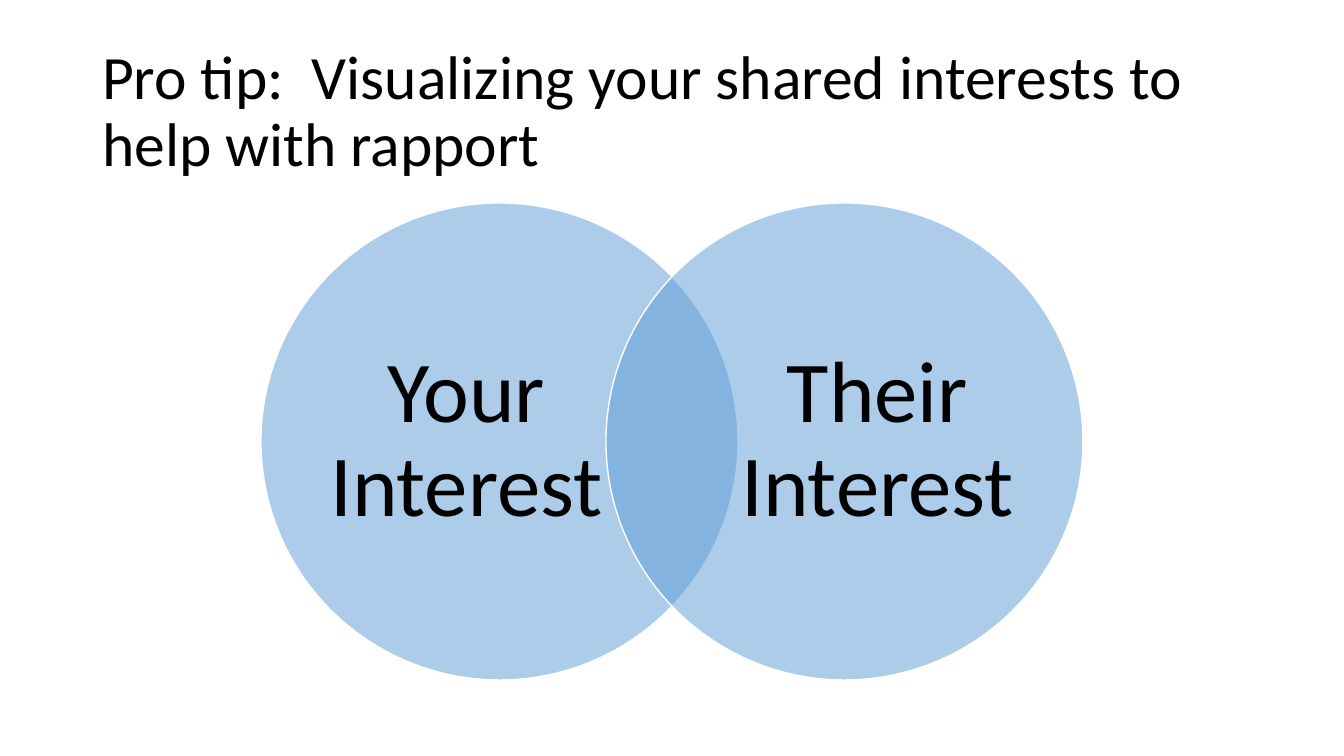
from dataclasses import dataclass

from lxml import etree
from pptx import Presentation
from pptx.dml.color import RGBColor
from pptx.enum.shapes import MSO_SHAPE
from pptx.enum.text import MSO_ANCHOR, MSO_AUTO_SIZE, PP_ALIGN
from pptx.oxml.ns import qn
from pptx.shapes.group import GroupShape
from pptx.text.text import TextFrame
from pptx.util import Emu, Pt

OVAL = MSO_SHAPE.OVAL
MIDDLE = MSO_ANCHOR.MIDDLE
NO_AUTOFIT = MSO_AUTO_SIZE.NONE
LEFT, CENTER = PP_ALIGN.LEFT, PP_ALIGN.CENTER

EMU_PER_PX = 914400 / 100.8
SLIDE_WIDTH, SLIDE_HEIGHT = 1344, 756
TITLE_ONLY = 5

# Venn geometry in px
DIAMETER = 477
CIRCLE_TOP = 203
LABEL_WIDTH, LABEL_HEIGHT = 275, 365
OUTER_MARGIN = 68  # from a circle's outer edge to its label


@dataclass(frozen=True)
class Theme:
    font: str = "Calibri"
    text: RGBColor = RGBColor(0x00, 0x00, 0x00)
    circle: RGBColor = RGBColor(0x5B, 0x9B, 0xD5)
    outline: RGBColor = RGBColor(0xFF, 0xFF, 0xFF)
    circle_opacity: int = 50
    outline_width: int = 1
    title_size: int = 44
    label_size: int = 62
    line_spacing: float = 0.9


@dataclass(frozen=True)
class Interest:
    label: str
    circle_left: int
    label_offset: int


THEME = Theme()
INTERESTS = (
    Interest("Your Interest", 261, OUTER_MARGIN),
    Interest("Their Interest", 606, DIAMETER - LABEL_WIDTH - OUTER_MARGIN),
)


def px(length: int) -> Emu:
    return Emu(round(length * EMU_PER_PX))


def write(frame: TextFrame, text: str, size: int, alignment: PP_ALIGN) -> None:
    frame.text = text
    frame.word_wrap = True
    frame.auto_size = NO_AUTOFIT
    frame.vertical_anchor = MIDDLE
    paragraph = frame.paragraphs[0]
    paragraph.alignment = alignment
    paragraph.line_spacing = THEME.line_spacing
    font = paragraph.runs[0].font
    font.name = THEME.font
    font.size = Pt(size)
    font.color.rgb = THEME.text


def draw_interest(venn: GroupShape, interest: Interest) -> None:
    # Translucent circle
    circle = venn.shapes.add_shape(
        OVAL, px(interest.circle_left), px(CIRCLE_TOP), px(DIAMETER), px(DIAMETER)
    )
    circle.shadow.inherit = False
    circle.fill.solid()
    circle.fill.fore_color.rgb = THEME.circle
    fill_color = circle.fill._xPr.find(qn("a:solidFill"))[0]
    etree.SubElement(fill_color, qn("a:alpha"), val=str(THEME.circle_opacity * 1000))
    circle.line.color.rgb = THEME.outline
    circle.line.width = Pt(THEME.outline_width)

    # Label, clear of the overlap
    label = venn.shapes.add_textbox(
        px(interest.circle_left + interest.label_offset),
        px(CIRCLE_TOP + (DIAMETER - LABEL_HEIGHT) // 2),
        px(LABEL_WIDTH),
        px(LABEL_HEIGHT),
    )
    frame = label.text_frame
    frame.margin_left = frame.margin_right = frame.margin_top = frame.margin_bottom = 0
    write(frame, interest.label, THEME.label_size, CENTER)


def main() -> None:
    deck = Presentation()
    deck.slide_width, deck.slide_height = px(SLIDE_WIDTH), px(SLIDE_HEIGHT)
    slide = deck.slides.add_slide(deck.slide_layouts[TITLE_ONLY])

    # Title
    title = slide.shapes.title
    title.left, title.top = px(92), px(40)
    title.width, title.height = px(1159), px(146)
    write(
        title.text_frame,
        "Pro tip:  Visualizing your shared interests to help with rapport",
        THEME.title_size,
        LEFT,
    )

    # Venn diagram
    venn = slide.shapes.add_group_shape()
    for interest in INTERESTS:
        draw_interest(venn, interest)

    deck.save("out.pptx")


if __name__ == "__main__":
    main()
